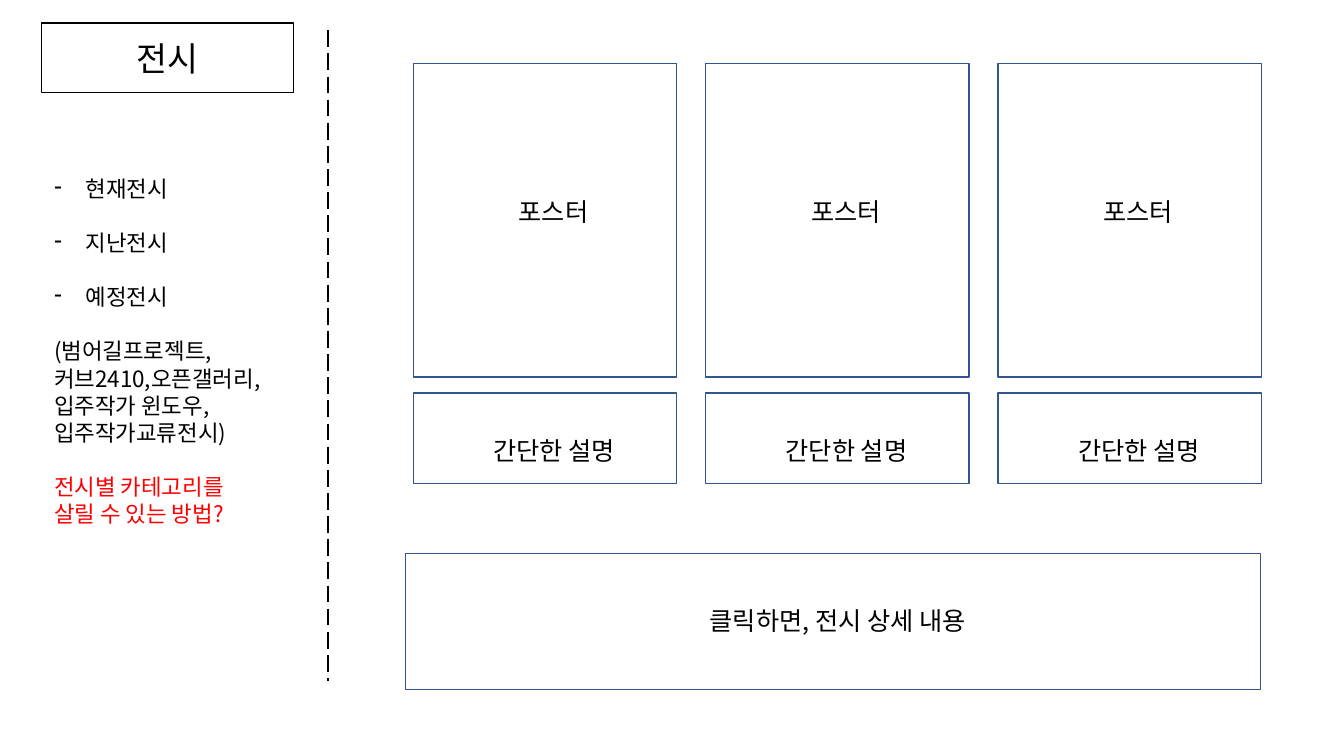
from lxml import etree
from pptx import Presentation
from pptx.dml.color import RGBColor
from pptx.enum.dml import MSO_LINE
from pptx.enum.shapes import MSO_CONNECTOR, MSO_SHAPE
from pptx.enum.text import MSO_ANCHOR, MSO_AUTO_SIZE, PP_ALIGN
from pptx.oxml.ns import qn
from pptx.util import Pt

PX = 9144  # 100 px to the inch
FONT = "Noto Sans CJK KR"
BLACK = RGBColor(0x00, 0x00, 0x00)
RED = RGBColor(0xFF, 0x00, 0x00)
BLUE = RGBColor(0x32, 0x54, 0x91)

TITLE = "전시"
# text, bulleted, gap before, colour
MENU = [
    ("현재전시", True, False, BLACK),
    ("지난전시", True, True, BLACK),
    ("예정전시", True, True, BLACK),
    ("(범어길프로젝트,", False, True, BLACK),
    ("커브2410,오픈갤러리, 입주작가 윈도우,", False, False, BLACK),
    ("입주작가교류전시)", False, False, BLACK),
    ("전시별 카테고리를", False, True, RED),
    ("살릴 수 있는 방법?", False, False, RED),
]
# label, box top, box height, label top, label width
CARD_ROWS = [
    ("포스터", 63, 311, 190, 96),
    ("간단한 설명", 390, 90, 427, 155),
]
DETAIL = "클릭하면, 전시 상세 내용"

CARD_COUNT, CARD_LEFT, CARD_PITCH, CARD_WIDTH = 3, 410, 290, 261
LABEL_CENTER = 139  # from the left edge of a card
LABEL_HEIGHT = 40
MENU_LINE = Pt(19.3)
MENU_INDENT = 31


def emu(*lengths):
    return [length * PX for length in lengths]


def format_runs(paragraph, size, color=BLACK):
    for run in paragraph.runs:
        run.font.size = Pt(size)
        run.font.name = FONT
        run.font.color.rgb = color
        east_asian = etree.SubElement(run.font._element, qn("a:ea"))
        east_asian.set("typeface", FONT)


def outline(shape, color):
    shape.fill.background()
    shape.line.color.rgb = color
    shape.line.width = Pt(1)


def add_box(slide, *bounds):
    box = slide.shapes.add_shape(MSO_SHAPE.RECTANGLE, *emu(*bounds))
    box.shadow.inherit = False
    outline(box, BLUE)


def add_label(slide, text, bounds, alignment):
    frame = slide.shapes.add_textbox(*emu(*bounds)).text_frame
    frame.word_wrap = False
    frame.vertical_anchor = MSO_ANCHOR.MIDDLE
    frame.text = text
    frame.paragraphs[0].alignment = alignment
    format_runs(frame.paragraphs[0], 18)


def add_dash_bullet(paragraph):
    properties = paragraph._p.get_or_add_pPr()
    properties.set("marL", str(MENU_INDENT * PX))
    properties.set("indent", str(-MENU_INDENT * PX))
    etree.SubElement(properties, qn("a:buChar")).set("char", "-")


def add_title(slide):
    title = slide.shapes.title
    title.left, title.top, title.width, title.height = emu(41, 23, 250, 69)
    outline(title, BLACK)
    frame = title.text_frame
    frame.text = TITLE
    frame.auto_size = MSO_AUTO_SIZE.NONE
    frame.vertical_anchor = MSO_ANCHOR.MIDDLE
    frame.paragraphs[0].alignment = PP_ALIGN.CENTER
    format_runs(frame.paragraphs[0], 24)


def add_divider(slide):
    divider = slide.shapes.add_connector(
        MSO_CONNECTOR.STRAIGHT, *emu(325, 30, 325, 676))
    divider.line.color.rgb = BLACK
    divider.line.width = Pt(1.5)
    divider.line.dash_style = MSO_LINE.LONG_DASH
    etree.SubElement(divider._element.spPr, qn("a:effectLst"))


def add_menu(slide):
    frame = slide.shapes.add_textbox(*emu(44, 169, 250, 360)).text_frame
    frame.word_wrap = True
    for index, (text, bulleted, gap, color) in enumerate(MENU):
        paragraph = frame.add_paragraph() if index else frame.paragraphs[0]
        paragraph.text = text
        paragraph.line_spacing = MENU_LINE
        paragraph.space_before = MENU_LINE if gap else Pt(0)
        if bulleted:
            add_dash_bullet(paragraph)
        format_runs(paragraph, 16, color)


def add_cards(slide):
    for text, top, height, label_top, label_width in CARD_ROWS:
        for column in range(CARD_COUNT):
            left = CARD_LEFT + column * CARD_PITCH
            add_box(slide, left, top, CARD_WIDTH, height)
            label_left = left + LABEL_CENTER - label_width // 2
            bounds = (label_left, label_top, label_width, LABEL_HEIGHT)
            add_label(slide, text, bounds, PP_ALIGN.CENTER)


def main():
    presentation = Presentation()
    presentation.slide_width, presentation.slide_height = emu(1333, 750)
    slide = presentation.slides.add_slide(presentation.slide_layouts[5])
    add_title(slide)
    add_divider(slide)
    add_menu(slide)
    add_cards(slide)
    add_box(slide, 402, 549, 848, 135)
    add_label(slide, DETAIL, (694, 596, 305, LABEL_HEIGHT), PP_ALIGN.LEFT)
    presentation.save("out.pptx")


if __name__ == "__main__":
    main()
